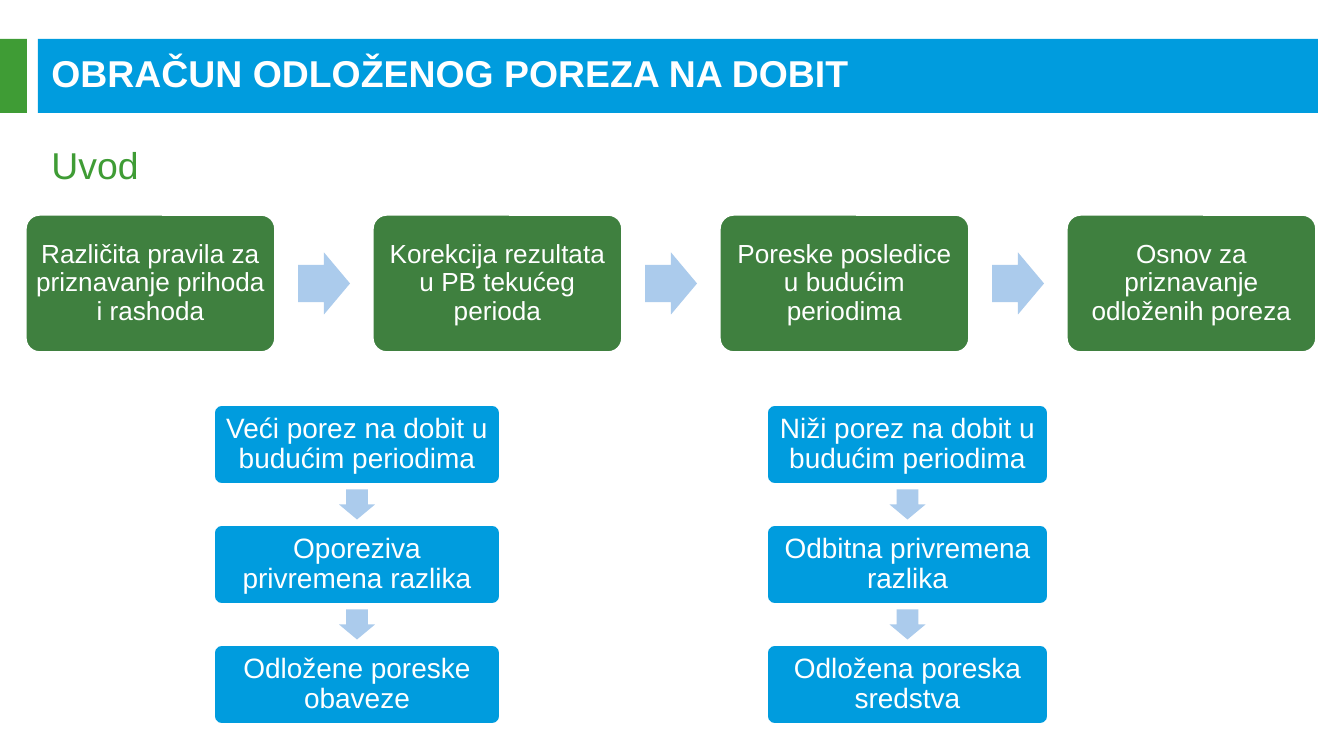
from dataclasses import dataclass

from pptx import Presentation
from pptx import util as u
from pptx.dml.color import RGBColor
from pptx.enum import shapes, text
from pptx.oxml.ns import qn

PX = 914400 / 134.4
BLUE = RGBColor(0x00, 0x9C, 0xDE)
GREEN = RGBColor(0x3F, 0x9C, 0x35)
MOSS = RGBColor(0x3F, 0x80, 0x3F)
PALE = RGBColor(0xAB, 0xCB, 0xEC)
WHITE = RGBColor(0xFF, 0xFF, 0xFF)
KIND = shapes.MSO_SHAPE


def px(n: float) -> int:
    return round(n * PX)


@dataclass
class Flow:
    """Equal boxes, each (dx, dy) from the last, with arrows between."""
    x: int
    y: int
    w: int
    h: int
    dx: int
    dy: int
    fill: RGBColor
    size: int
    arrow: tuple[int, int]
    steps: list[str]


FLOWS = [
    Flow(26, 215, 249, 137, 347, 0, MOSS, 14, (52, 62), [
        "Različita pravila za priznavanje prihoda i rashoda",
        "Korekcija rezultata u PB tekućeg perioda",
        "Poreske posledice u budućim periodima",
        "Osnov za priznavanje odloženih poreza"]),
    Flow(214, 405, 286, 79, 0, 120, BLUE, 15, (30, 36), [
        "Veći porez na dobit u budućim periodima",
        "Oporeziva privremena razlika",
        "Odložene poreske obaveze"]),
    Flow(767, 405, 281, 79, 0, 120, BLUE, 15, (30, 36), [
        "Niži porez na dobit u budućim periodima",
        "Odbitna privremena razlika",
        "Odložena poreska sredstva"]),
]


def add(slide, kind, x: float, y: float, w: int, h: int, fill: RGBColor):
    shape = slide.shapes.add_shape(kind, px(x), px(y), px(w), px(h))
    shape.shadow.inherit = False
    shape.fill.solid()
    shape.fill.fore_color.rgb = fill
    shape.line.fill.background()
    return shape


def style(para, size: int, color: RGBColor, align, bold: bool = False) -> None:
    para.alignment = align
    para.space_before = u.Pt(0)
    for run in para.runs:
        font = run.font
        font.name, font.size, font.bold = "Arial", u.Pt(size), bold
        font.color.rgb = color


def draw(slide, flow: Flow) -> None:
    for i, step in enumerate(flow.steps):
        x, y = flow.x + i * flow.dx, flow.y + i * flow.dy
        if i:
            size, width = flow.arrow
            mid_x = x + (flow.w - flow.dx) / 2
            mid_y = y + (flow.h - flow.dy) / 2
            arrow = add(slide, KIND.RIGHT_ARROW, mid_x - size / 2,
                        mid_y - width / 2, size, width, PALE)
            arrow.adjustments[0], arrow.adjustments[1] = 0.6, 0.5
            arrow.rotation = 90 if flow.dy else 0
        box = add(slide, KIND.ROUNDED_RECTANGLE, x, y, flow.w, flow.h, flow.fill)
        box.adjustments[0] = 0.1
        box.line.color.rgb = WHITE
        box.line.width = u.Pt(0.85)
        frame = box.text_frame
        frame.text = step
        frame.word_wrap = True
        frame.vertical_anchor = text.MSO_ANCHOR.MIDDLE
        frame.margin_left = frame.margin_right = px(4)
        frame.margin_top = frame.margin_bottom = px(4)
        para = frame.paragraphs[0]
        para.line_spacing = 0.9
        style(para, flow.size, WHITE, text.PP_ALIGN.CENTER)


def fill_in(holder, words: str, at: tuple[int, int, int, int], anchor,
            color: RGBColor, bold: bool) -> None:
    holder.left, holder.top, holder.width, holder.height = map(px, at)
    frame = holder.text_frame
    frame.text = words
    frame.auto_size = text.MSO_AUTO_SIZE.NONE
    frame.vertical_anchor = anchor
    para = frame.paragraphs[0]
    props = para._p.get_or_add_pPr()
    props.set("marL", "0")
    props.set("indent", "0")
    props.append(props.makeelement(qn("a:buNone"), {}))
    style(para, 20, color, text.PP_ALIGN.LEFT, bold)


def main() -> None:
    deck = Presentation()
    deck.slide_width, deck.slide_height = px(1344), px(756)
    slide = deck.slides.add_slide(deck.slide_layouts[1])
    title, body = slide.placeholders
    for x, w, color in ((38, 1280, BLUE), (0, 27, GREEN)):
        bar = add(slide, KIND.RECTANGLE, x, 39, w, 74, color)
        title._element.addprevious(bar._element)
    fill_in(title, "OBRAČUN ODLOŽENOG POREZA NA DOBIT", (38, 53, 1270, 40),
            text.MSO_ANCHOR.MIDDLE, WHITE, True)
    fill_in(body, "Uvod", (38, 135, 1280, 71),
            text.MSO_ANCHOR.TOP, GREEN, False)
    for flow in FLOWS:
        draw(slide, flow)
    deck.save("out.pptx")


if __name__ == "__main__":
    main()
